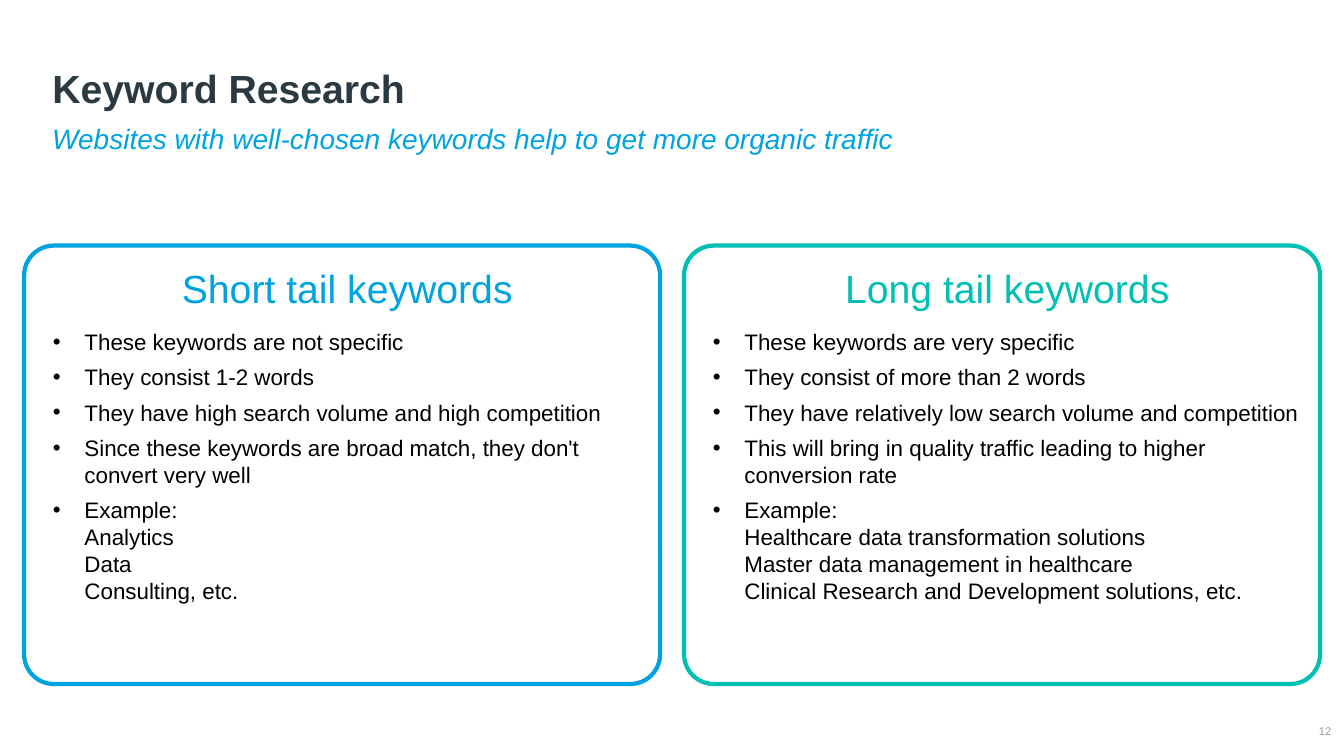
"""Build the keyword research slide comparing short and long tail keywords."""
from lxml.etree import SubElement
from pptx import Presentation
from pptx.dml.color import RGBColor
from pptx.enum.shapes import MSO_SHAPE
from pptx.enum.text import MSO_ANCHOR, MSO_AUTO_SIZE, PP_ALIGN
from pptx.oxml.ns import qn
from pptx.util import Pt

COLORS = {
    "title": "2B3A42",
    "blue": "00A3E0",
    "teal": "00BFB3",
    "text": "000000",
    "number": "959CA0",
    "white": "FFFFFF",
}
PANELS = [
    ("Short tail keywords", "blue", [
        ["These keywords are not specific"],
        ["They consist 1-2 words"],
        ["They have high search volume and high competition"],
        ["Since these keywords are broad match, they don't convert very well"],
        ["Example:", "Analytics", "Data", "Consulting, etc."],
    ]),
    ("Long tail keywords", "teal", [
        ["These keywords are very specific"],
        ["They consist of more than 2 words"],
        ["They have relatively low search volume and competition"],
        ["This will bring in quality traffic leading to higher conversion rate"],
        ["Example:", "Healthcare data transformation solutions",
         "Master data management in healthcare",
         "Clinical Research and Development solutions, etc."],
    ]),
]
PANEL_LEFT, PANEL_STEP = 17.2, 471.4


def set_frame(shape, anchor, left, top, right, bottom):
    frame = shape.text_frame
    frame.word_wrap = True
    frame.auto_size = MSO_AUTO_SIZE.NONE
    frame.vertical_anchor = anchor
    frame.margin_left, frame.margin_top = Pt(left), Pt(top)
    frame.margin_right, frame.margin_bottom = Pt(right), Pt(bottom)
    return frame


def write(paragraph, lines, size, color, align=PP_ALIGN.LEFT, spacing=1.0, after=0,
          bold=False, italic=False):
    paragraph.alignment = align
    paragraph.line_spacing = spacing
    paragraph.space_before = Pt(0)
    paragraph.space_after = Pt(after)
    for index, line in enumerate(lines):
        if index:
            paragraph.add_line_break()
        run = paragraph.add_run()
        run.text = line
        run.font.name = "Arial"
        run.font.size = Pt(size)
        run.font.bold = bold
        run.font.italic = italic
        run.font.color.rgb = RGBColor.from_string(COLORS[color])


presentation = Presentation()
presentation.slide_width, presentation.slide_height = Pt(960), Pt(540)
slide = presentation.slides.add_slide(presentation.slide_layouts[5])

title = slide.shapes.title
title.left, title.top, title.width, title.height = Pt(30.2), Pt(23), Pt(892.8), Pt(60.5)
frame = set_frame(title, MSO_ANCHOR.BOTTOM, 7.2, 3.6, 7.2, 3.6)
write(frame.paragraphs[0], ["Keyword Research"], 28, "title", spacing=0.9, bold=True)

subtitle = slide.shapes.add_textbox(Pt(30.2), Pt(83.5), Pt(846), Pt(31.7))
frame = set_frame(subtitle, MSO_ANCHOR.TOP, 7.2, 3.6, 7.2, 3.6)
write(frame.paragraphs[0],
      ["Websites with well-chosen keywords help to get more organic traffic"],
      20, "blue", after=6, italic=True)

for column, (heading, color, bullets) in enumerate(PANELS):
    panel = slide.shapes.add_shape(
        MSO_SHAPE.ROUNDED_RECTANGLE, Pt(PANEL_LEFT + column * PANEL_STEP), Pt(175.4),
        Pt(454.3), Pt(313.2))
    panel.adjustments[0] = 0.068
    panel.shadow.inherit = False
    panel.fill.solid()
    panel.fill.fore_color.rgb = RGBColor.from_string(COLORS["white"])
    panel.line.color.rgb = RGBColor.from_string(COLORS[color])
    panel.line.width = Pt(3)
    frame = set_frame(panel, MSO_ANCHOR.TOP, 14.4, 7.2, 7.2, 3.6)
    write(frame.paragraphs[0], [heading], 28, color, PP_ALIGN.CENTER, after=12)
    for lines in bullets:
        paragraph = frame.add_paragraph()
        write(paragraph, lines, 16, "text", after=6)
        properties = paragraph._p.get_or_add_pPr()
        properties.set("marL", str(Pt(22.5)))
        properties.set("indent", str(Pt(-22.5)))
        SubElement(properties, qn("a:buFont")).set("typeface", "Arial")
        SubElement(properties, qn("a:buChar")).set("char", "•")

slide_number = slide.shapes.add_textbox(Pt(923), Pt(515.5), Pt(28.1), Pt(13.7))
frame = set_frame(slide_number, MSO_ANCHOR.MIDDLE, 0, 0, 0, 0)
write(frame.paragraphs[0], ["12"], 8, "number", PP_ALIGN.RIGHT)

presentation.save("out.pptx")
